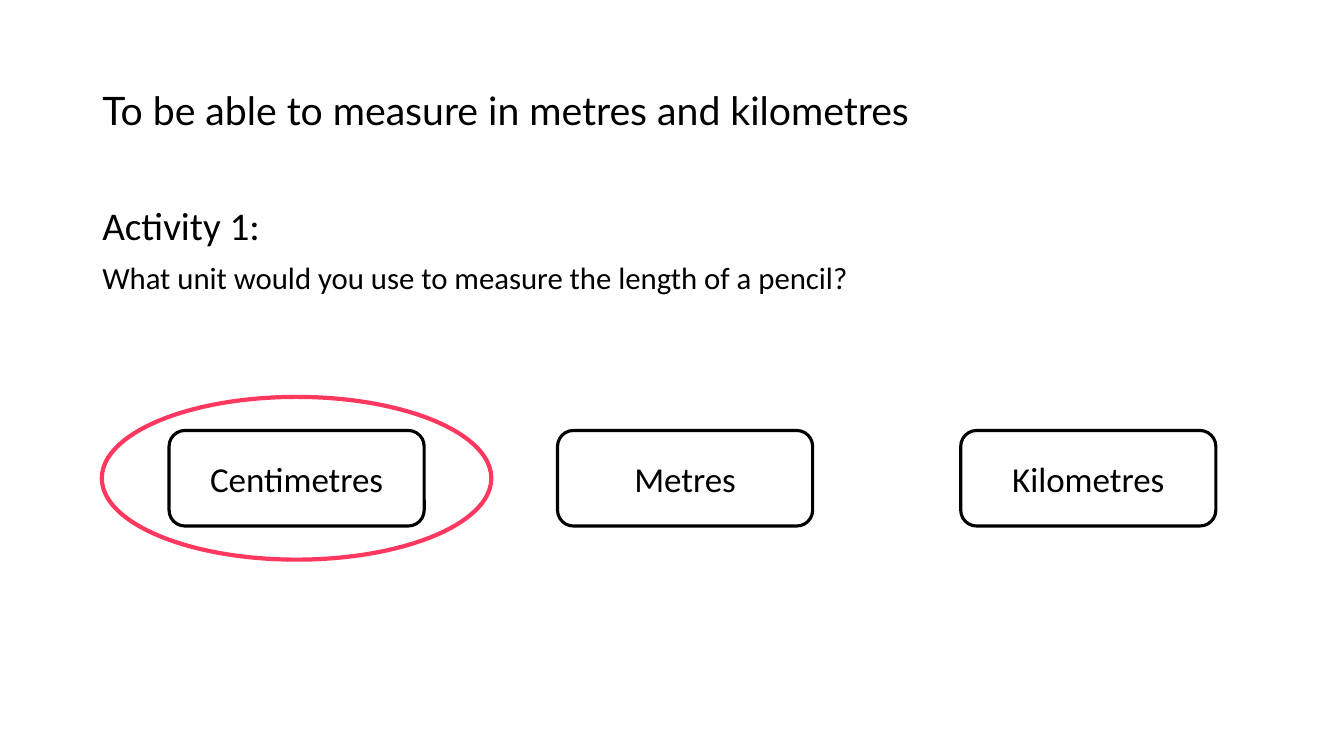
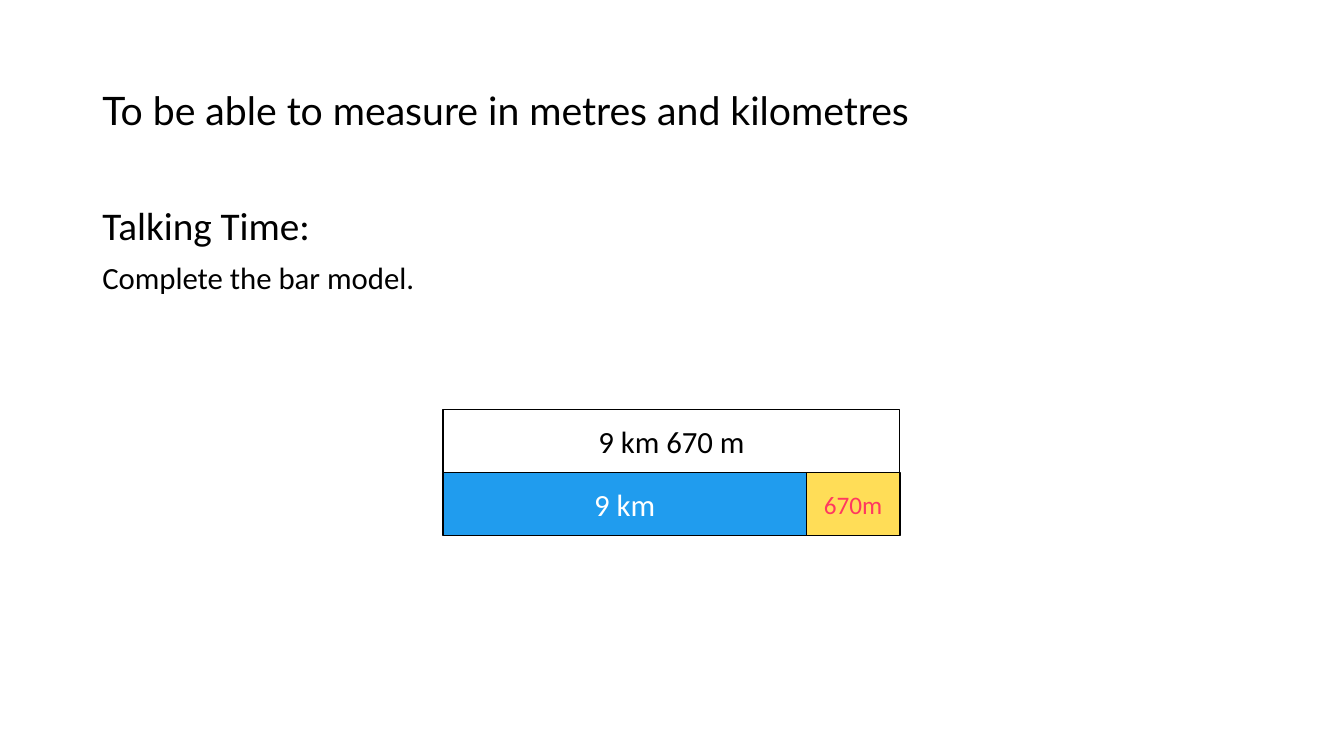
"""Build two slides of a lesson on measuring in metres and kilometres."""
from dataclasses import dataclass

from pptx import Presentation
from pptx import util as u
from pptx.dml.color import RGBColor
from pptx.enum import shapes, text

PX = 9525
COLORS = {
    "black": "000000",
    "white": "FFFFFF",
    "red": "FF3860",
    "blue": "209CEE",
    "yellow": "FFDD57",
}
TITLE = "To be able to measure in metres and kilometres"
TITLE_FONT, BODY_FONT = "Lato", "Calibri"
MARGIN = 88
BUTTON_Y, BUTTON_W, BUTTON_H = 410, 243, 91
BAR_X, BAR_Y, BAR_W, BAR_H = 422, 390, 435, 60
KM_W = 346


@dataclass
class Block:
    x: int
    y: int
    w: int
    h: int
    label: str = ""
    size: int = 22
    color: str = "black"
    fill: str | None = "white"
    line: str = "black"
    weight: float = 1
    kind: shapes.MSO_SHAPE = shapes.MSO_SHAPE.RECTANGLE


@dataclass
class Page:
    heading: str
    prompt: str
    blocks: list[Block]


def button(x: int, label: str) -> Block:
    return Block(x, BUTTON_Y, BUTTON_W, BUTTON_H, label, 25, weight=2.25,
                 kind=shapes.MSO_SHAPE.ROUNDED_RECTANGLE)


PAGES = [
    Page("Activity 1:", "What unit would you use to measure the length of a pencil?", [
        button(161, "Centimetres"),
        button(531, "Metres"),
        button(915, "Kilometres"),
        Block(97, 378, 371, 155, fill=None, line="red", weight=3,
              kind=shapes.MSO_SHAPE.OVAL),
    ]),
    Page("Talking Time:", "Complete the bar model.", [
        Block(BAR_X, BAR_Y, BAR_W, BAR_H, "9 km 670 m"),
        Block(BAR_X, BAR_Y + BAR_H, KM_W, BAR_H, "9 km", color="white", fill="blue"),
        Block(BAR_X + KM_W, BAR_Y + BAR_H, BAR_W - KM_W, BAR_H, "670m", 18,
              "red", "yellow"),
    ]),
]


def rgb(name: str) -> RGBColor:
    return RGBColor.from_string(COLORS[name])


def style(p, size: int, color: str = "black", font: str = BODY_FONT) -> None:
    for r in p.runs:
        r.font.size = u.Pt(size)
        r.font.name = font
        r.font.color.rgb = rgb(color)


def add_text(s, y: int, w: int, h: int, lines: list[tuple[str, int]],
             anchor: text.MSO_ANCHOR, font: str) -> None:
    tf = s.shapes.add_textbox(MARGIN * PX, y * PX, w * PX, h * PX).text_frame
    tf.word_wrap = True
    tf.vertical_anchor = anchor
    tf.text = "\n".join(line for line, _ in lines)
    for i, (p, (_, size)) in enumerate(zip(tf.paragraphs, lines)):
        p.line_spacing = 0.9
        if i:
            p.space_before = u.Pt(10)
        style(p, size, font=font)


def add_block(s, b: Block) -> None:
    sp = s.shapes.add_shape(b.kind, b.x * PX, b.y * PX, b.w * PX, b.h * PX)
    sp.shadow.inherit = False
    if b.fill:
        sp.fill.solid()
        sp.fill.fore_color.rgb = rgb(b.fill)
    else:
        sp.fill.background()
    sp.line.color.rgb = rgb(b.line)
    sp.line.width = u.Pt(b.weight)
    if b.label:
        tf = sp.text_frame
        tf.text = b.label
        tf.vertical_anchor = text.MSO_ANCHOR.MIDDLE
        p = tf.paragraphs[0]
        p.alignment = text.PP_ALIGN.CENTER
        style(p, b.size, b.color)


def add_page(prs, page: Page) -> None:
    s = prs.slides.add_slide(prs.slide_layouts[6])
    add_text(s, 38, 922, 139, [(TITLE, 28)], text.MSO_ANCHOR.MIDDLE, TITLE_FONT)
    add_text(s, 192, 1104, 457, [(page.heading, 28), (page.prompt, 22)],
             text.MSO_ANCHOR.TOP, BODY_FONT)
    for b in page.blocks:
        add_block(s, b)


def main() -> None:
    prs = Presentation()
    prs.slide_width, prs.slide_height = 1280 * PX, 720 * PX
    for page in PAGES:
        add_page(prs, page)
    prs.save("out.pptx")


if __name__ == "__main__":
    main()
